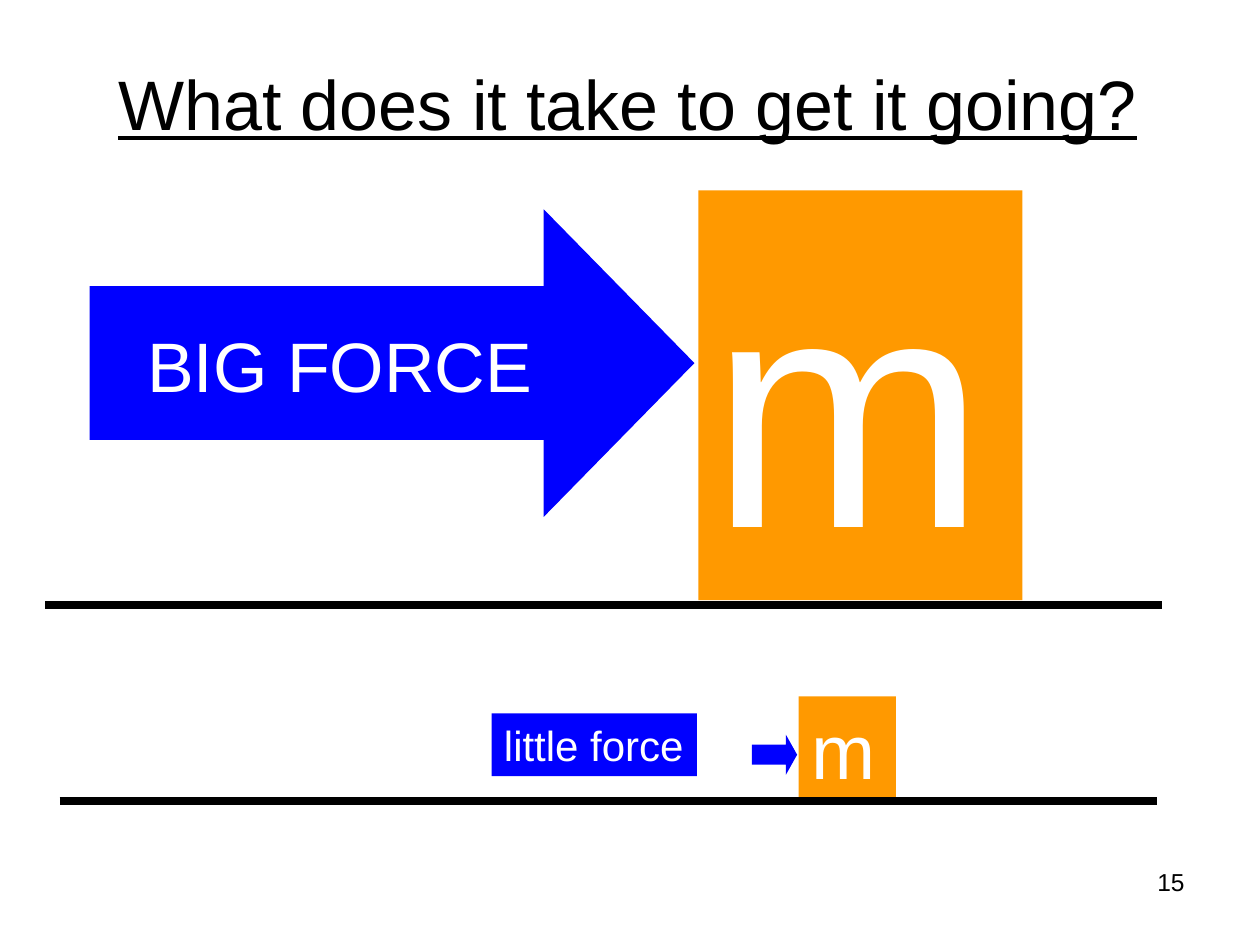
from lxml import etree
from pptx import Presentation
from pptx.dml.color import RGBColor
from pptx.enum.shapes import MSO_CONNECTOR, MSO_SHAPE
from pptx.enum.text import MSO_ANCHOR, PP_ALIGN
from pptx.oxml.ns import qn
from pptx.util import Cm, Pt

BLACK = RGBColor(0x00, 0x00, 0x00)
WHITE = RGBColor(0xFF, 0xFF, 0xFF)
ORANGE = RGBColor(0xFF, 0x99, 0x00)
BLUE = RGBColor(0x00, 0x00, 0xFF)
RECTANGLE, RIGHT_ARROW = MSO_SHAPE.RECTANGLE, MSO_SHAPE.RIGHT_ARROW
STRAIGHT = MSO_CONNECTOR.STRAIGHT
TOP, MIDDLE = MSO_ANCHOR.TOP, MSO_ANCHOR.MIDDLE
LEFT, CENTER, RIGHT = PP_ALIGN.LEFT, PP_ALIGN.CENTER, PP_ALIGN.RIGHT


def write(box, text, size, color, align=LEFT, anchor=TOP, wrap=True):
    frame = box.text_frame
    frame.text = text
    frame.word_wrap = wrap
    frame.vertical_anchor = anchor
    para = frame.paragraphs[0]
    para.alignment = align
    font = para.runs[0].font
    font.name, font.size, font.color.rgb = "Arial", Pt(size), color


def add_filled(kind, left, top, width, height, color):
    shape = slide.shapes.add_shape(kind, Cm(left), Cm(top), Cm(width), Cm(height))
    shape.shadow.inherit = False
    shape.fill.solid()
    shape.fill.fore_color.rgb = color
    shape.line.fill.background()
    return shape


deck = Presentation()
deck.slide_width, deck.slide_height = Cm(25.4), Cm(19.05)
slide = deck.slides.add_slide(deck.slide_layouts[5])

# Title
title = slide.shapes.title
title.left, title.top, title.width, title.height = Cm(1.22), Cm(0.48), Cm(22.86), Cm(3.18)
write(title, "What does it take to get it going?", 40, BLACK, CENTER, MIDDLE)
title.text_frame.paragraphs[0].runs[0].font.underline = True

# Masses, the arrows pushing them and the ground below
scenes = [
    # mass box, text size, arrow box, head ratio, ground left, right, height
    ((14.08, 3.84, 6.53, 8.26), 189, (1.81, 4.22, 12.19, 6.2), 0.49, (0.91, 23.42, 12.19)),
    ((16.1, 14.04, 1.96, 2.1), 44, (15.16, 14.81, 0.91, 0.81), 0.28, (1.2, 23.33, 16.15)),
]
for mass_box, size, arrow_box, head, (start, end, level) in scenes:
    mass = add_filled(RECTANGLE, *mass_box, ORANGE)
    write(mass, "m", size, WHITE)
    arrow = add_filled(RIGHT_ARROW, *arrow_box, BLUE)
    arrow.adjustments[0] = 0.5
    arrow.adjustments[1] = head
    ground = slide.shapes.add_connector(STRAIGHT, Cm(start), Cm(level), Cm(end), Cm(level))
    ground.line.color.rgb = BLACK
    ground.line.width = Pt(4.5)
    etree.SubElement(ground._element.spPr, qn("a:effectLst"))

# Force labels
big_label = slide.shapes.add_textbox(Cm(2.72), Cm(6.38), Cm(8.28), Cm(1.96))
write(big_label, "BIG FORCE", 40, WHITE, wrap=False)
little_label = add_filled(RECTANGLE, 9.91, 14.38, 4.14, 1.27, BLUE)
write(little_label, "little force", 24, WHITE, wrap=False)

# Page number
page_number = slide.shapes.add_textbox(Cm(18.21), Cm(17.35), Cm(5.92), Cm(1.32))
write(page_number, "15", 14, BLACK, RIGHT)

deck.save("out.pptx")
